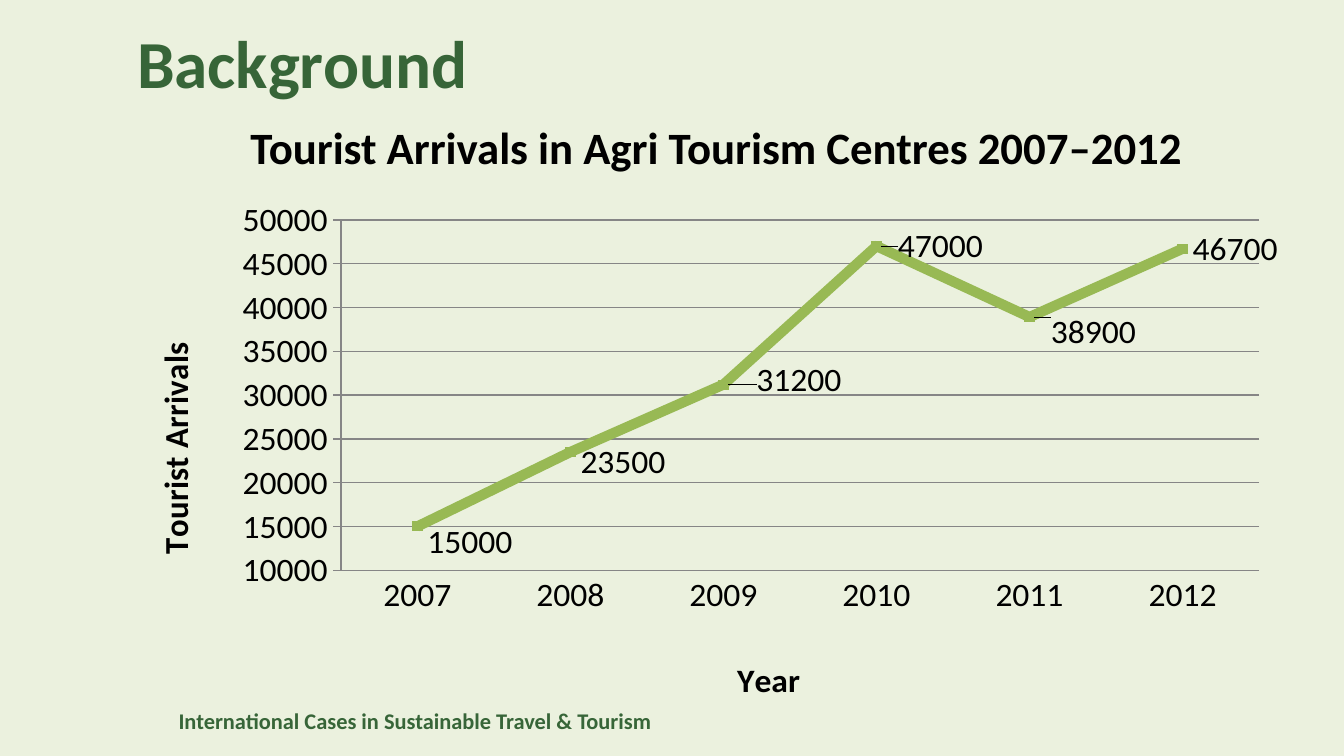
from lxml import etree
from pptx import Presentation
from pptx import util as u
from pptx.chart.data import CategoryChartData
from pptx.dml.color import RGBColor
from pptx.enum import chart as ch, text
from pptx.oxml.ns import qn

FONT = "Calibri"
GREEN = "376538"
BLACK = "000000"
LINE = "98B954"
GRID = "868686"
C15 = "http://schemas.microsoft.com/office/drawing/2012/chart"
LABEL_EXTENSION = "{CE6537A1-D6FC-4f65-9D91-7224C49458BB}"
ARRIVALS = {"2007": 15000, "2008": 23500, "2009": 31200,
            "2010": 47000, "2011": 38900, "2012": 46700}
LABEL_SHIFTS = [(0, 0.03), (0, 0.02), (0.02, -0.01), (0.01, 0), (0.01, 0.03)]


def colour(value):
    return RGBColor.from_string(value)


def inches(box):
    return [u.Inches(length) for length in box]


def style_font(font, size, value, bold=False):
    font.name = FONT
    font.size = u.Pt(size)
    font.bold = bold
    font.color.rgb = colour(value)


def style_line(line, value, width):
    line.color.rgb = colour(value)
    line.width = u.Pt(width)


def write(shape, words, size, value, align):
    frame = shape.text_frame
    frame.word_wrap = True
    para = frame.paragraphs[0]
    para.alignment = align
    span = para.add_run()
    span.text = words
    style_font(span.font, size, value, True)


def add_title(page, box, words):
    title = page.shapes.title
    title.left, title.top, title.width, title.height = inches(box)
    title.text_frame.vertical_anchor = text.MSO_ANCHOR.MIDDLE
    write(title, words, 36, GREEN, text.PP_ALIGN.LEFT)


def add_text(page, box, words, size, value, align=text.PP_ALIGN.LEFT):
    write(page.shapes.add_textbox(*inches(box)), words, size, value, align)


def set_layout(parent, index, **settings):
    for old in parent.findall(qn("c:layout")):
        parent.remove(old)
    layout = etree.Element(qn("c:layout"))
    manual = etree.SubElement(layout, qn("c:manualLayout"))
    for name, value in settings.items():
        etree.SubElement(manual, qn(f"c:{name}")).set("val", str(value))
    parent.insert(index, layout)


def style_axis(axis, words, tick, x, y, rotation):
    axis.major_tick_mark = tick
    axis.minor_tick_mark = ch.XL_TICK_MARK.NONE
    style_line(axis.format.line, GRID, 0.75)
    style_font(axis.tick_labels.font, 18, BLACK)
    title = axis.axis_title
    span = title.text_frame.paragraphs[0].add_run()
    span.text = words
    style_font(span.font, 18, BLACK, True)
    element = title._element
    element.find(".//" + qn("a:bodyPr")).set("rot", str(rotation))
    set_layout(element, 1, xMode="edge", yMode="edge", x=x, y=y)


def hide_leader_lines(labels):
    for old in labels.findall(qn("c:showLeaderLines")):
        labels.remove(old)
    extensions = etree.SubElement(labels, qn("c:extLst"))
    extension = etree.SubElement(extensions, qn("c:ext"), nsmap={"c15": C15})
    extension.set("uri", LABEL_EXTENSION)
    etree.SubElement(extension, f"{{{C15}}}showLeaderLines").set("val", "0")


def style_series(series):
    series.smooth = False
    style_line(series.format.line, LINE, 5.5)
    marker = series.marker
    marker.style = ch.XL_MARKER_STYLE.SQUARE
    marker.size = 5
    marker.format.fill.solid()
    marker.format.fill.fore_color.rgb = colour(LINE)
    marker.format.line.color.rgb = colour(LINE)
    labels = series.data_labels
    labels.show_value = True
    labels.position = ch.XL_LABEL_POSITION.RIGHT
    style_font(labels.font, 18, BLACK)
    for index in range(len(LABEL_SHIFTS)):
        series.points[index].data_label.position = ch.XL_LABEL_POSITION.RIGHT
    for label, (x, y) in zip(series._element.iter(qn("c:dLbl")), LABEL_SHIFTS):
        set_layout(label, 1, x=x, y=y)
    hide_leader_lines(series._element.find(qn("c:dLbls")))


def add_arrivals_chart(page, box):
    data = CategoryChartData()
    data.categories = list(ARRIVALS)
    data.add_series("Series 1", list(ARRIVALS.values()))
    chart = page.shapes.add_chart(
        ch.XL_CHART_TYPE.LINE_MARKERS_STACKED, *inches(box), data).chart
    chart.has_title = False
    chart.has_legend = False
    style_font(chart.font, 18, BLACK)
    chart.plots[0].vary_by_categories = False
    style_axis(chart.category_axis, "Year", ch.XL_TICK_MARK.NONE, 0.52, 0.91, 0)
    values = chart.value_axis
    style_axis(values, "Tourist Arrivals", ch.XL_TICK_MARK.OUTSIDE, 0.01, 0.3, -5400000)
    values.minimum_scale = 10000
    values.maximum_scale = 50000
    values.major_unit = 5000
    values.has_major_gridlines = True
    style_line(values.major_gridlines.format.line, GRID, 0.75)
    style_series(chart.plots[0].series[0])
    plot_area = chart._chartSpace.find(".//" + qn("c:plotArea"))
    set_layout(plot_area, 0, layoutTarget="inner", xMode="edge", yMode="edge",
               x=0.18, y=0.06, w=0.8, h=0.69)


def main():
    deck = Presentation()
    deck.slide_width = u.Inches(10)
    deck.slide_height = deck.slide_width * 9 // 16
    page = deck.slides.add_slide(deck.slide_layouts.get_by_name("Title Only"))
    page.background.fill.solid()
    page.background.fill.fore_color.rgb = colour("EBF1DE")
    add_text(page, (1.23, 5.21, 5.81, 0.3),
             "International Cases in Sustainable Travel & Tourism", 12, GREEN)
    add_title(page, (0.92, 0.19, 8.75, 0.54), "Background")
    add_arrivals_chart(page, (1, 1.41, 8.54, 3.88))
    add_text(page, (1.67, 0.84, 7.32, 0.5),
             "Tourist Arrivals in Agri Tourism Centres 2007–2012",
             24, BLACK, text.PP_ALIGN.CENTER)
    deck.save("out.pptx")


if __name__ == "__main__":
    main()
